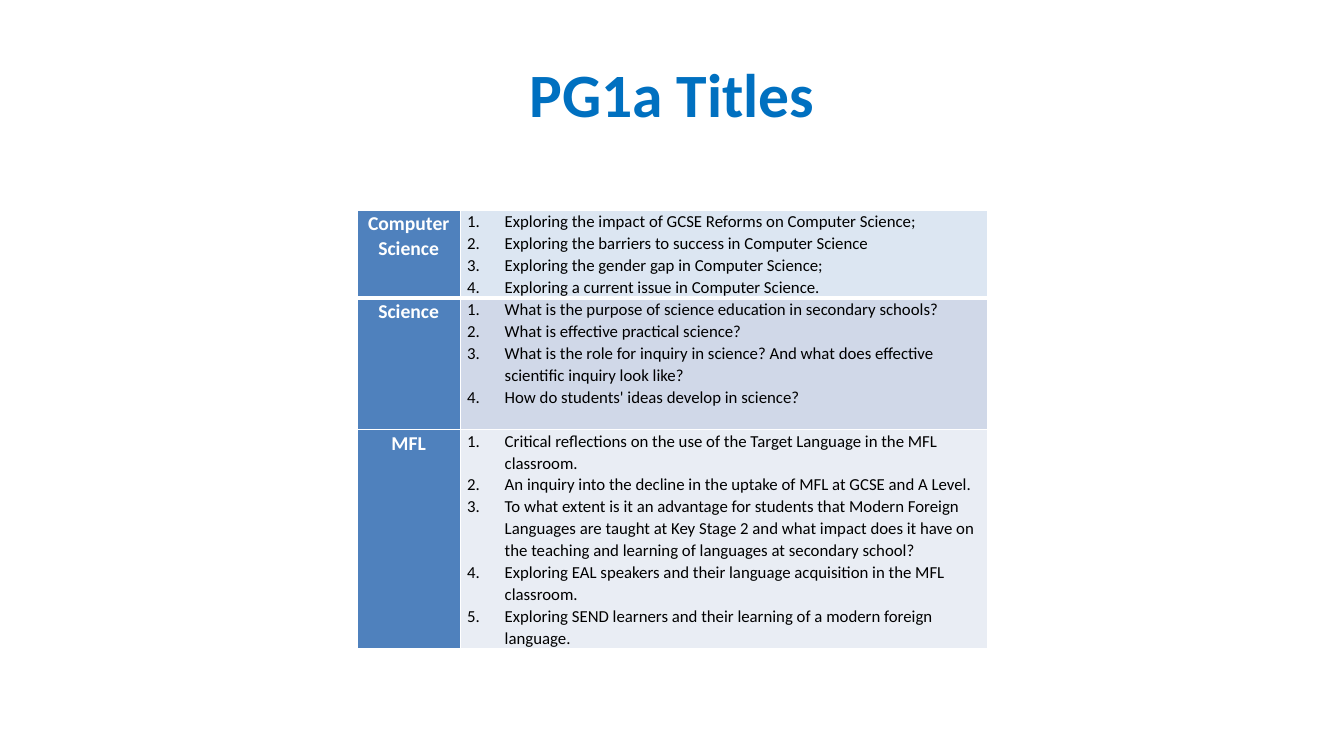
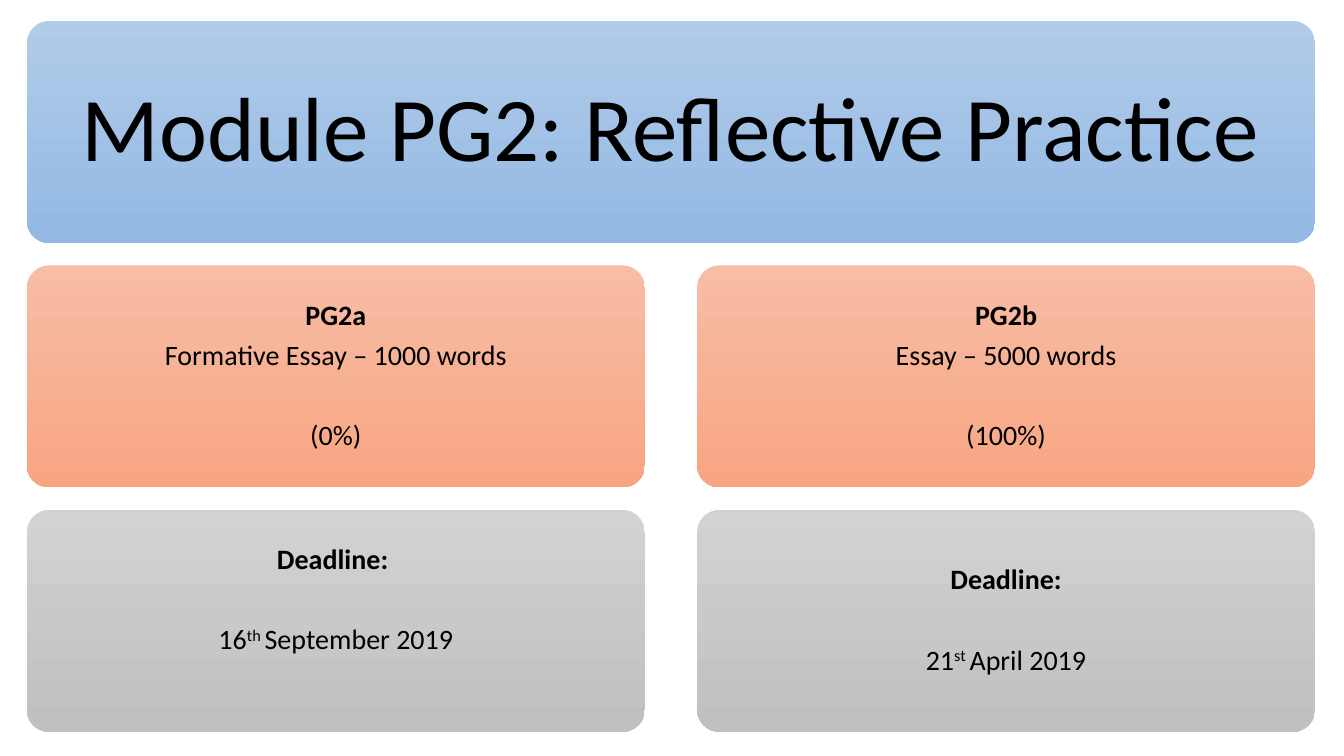
from dataclasses import dataclass

from lxml import etree
from pptx import Presentation
from pptx.dml.color import RGBColor
from pptx.enum.shapes import MSO_SHAPE
from pptx.enum.text import MSO_ANCHOR, PP_ALIGN
from pptx.oxml.ns import qn
from pptx.util import Cm, Pt

ROUNDED = MSO_SHAPE.ROUNDED_RECTANGLE
MIDDLE = MSO_ANCHOR.MIDDLE
CENTER, LEFT = PP_ALIGN.CENTER, PP_ALIGN.LEFT

FONT = "Calibri"
BLACK, WHITE = "000000", "FFFFFF"
TITLE_BLUE, SUBJECT_BLUE = "0070C0", "4F81BD"
BLUE_FADE = ("B1CBE9", "93B9E4")
ORANGE_FADE = ("F7BDA5", "F8A582")
GREY_FADE = ("D2D2D2", "C0C0C0")

# Card grid, in cm
GRID_LEFT, GRID_TOP = 0.68, 0.53
CARD_WIDTH, CARD_HEIGHT = 15.57, 5.59
COLUMN_GAP, ROW_GAP = 1.32, 0.57
LINE_STEP = 29  # points from one card line to the next
SPACE_AFTER = 7


@dataclass
class Subject:
    name: str
    height: float
    fill: str
    titles: list[str]
    top_rule: int = 1
    bottom_rule: int = 1


@dataclass
class Line:
    text: str
    bold: bool = False
    ordinal: str = ""
    rest: str = ""
    blank_before: int = 0


@dataclass
class Card:
    row: int
    column: int
    fade: tuple[str, str]
    lines: list[Line]
    span: int = 1
    size: int = 20
    inset: float = 0.2
    lift: float = 0  # extra bottom inset in points


SUBJECTS = [
    Subject("Computer Science", 2.22, "DCE6F2", [
        "Exploring the impact of GCSE Reforms on Computer Science;",
        "Exploring the barriers to success in Computer Science",
        "Exploring the gender gap in Computer Science;",
        "Exploring a current issue in Computer Science.",
    ], bottom_rule=3),
    Subject("Science", 3.32, "D0D8E8", [
        "What is the purpose of science education in secondary schools?",
        "What is effective practical science?",
        "What is the role for inquiry in science? And what does effective "
        "scientific inquiry look like?",
        "How do students' ideas develop in science?",
    ], top_rule=3),
    Subject("MFL", 5.51, "E9EDF4", [
        "Critical reflections on the use of the Target Language in the MFL classroom.",
        "An inquiry into the decline in the uptake of MFL at GCSE and A Level.",
        "To what extent is it an advantage for students that Modern Foreign "
        "Languages are taught at Key Stage 2 and what impact does it have on "
        "the teaching and learning of languages at secondary school?",
        "Exploring EAL speakers and their language acquisition in the MFL classroom.",
        "Exploring SEND learners and their learning of a modern foreign language.",
    ]),
]

CARDS = [
    Card(0, 0, BLUE_FADE, [Line("Module PG2: Reflective Practice")],
         span=2, size=65, inset=0.69),
    Card(1, 0, ORANGE_FADE, [
        Line("PG2a", bold=True),
        Line("Formative Essay – 1000 words"),
        Line("(0%)", blank_before=1),
    ]),
    Card(2, 0, GREY_FADE, [
        Line("Deadline: ", bold=True),
        Line("16", ordinal="th ", rest="September 2019", blank_before=1),
    ], lift=LINE_STEP),
    Card(1, 1, ORANGE_FADE, [
        Line("PG2b", bold=True),
        Line("Essay – 5000 words"),
        Line("(100%)", blank_before=1),
    ]),
    Card(2, 1, GREY_FADE, [
        Line("Deadline:", bold=True),
        Line("21", ordinal="st ", rest="April 2019", blank_before=1),
    ]),
]


def rgb(color: str) -> RGBColor:
    return RGBColor.from_string(color)


def apply_format(target, values: dict) -> None:
    for name, value in values.items():
        setattr(target, name, value)


def add_text(paragraph, text: str, size: int, color: str = BLACK,
             bold: bool = False, raised: bool = False) -> None:
    run = paragraph.add_run()
    run.text = text
    apply_format(run.font, {"name": FONT, "size": Pt(size), "bold": bold})
    run.font.color.rgb = rgb(color)
    if raised:
        run.font._element.set("baseline", "30000")


def next_paragraph(frame, index: int):
    return frame.add_paragraph() if index else frame.paragraphs[0]


def number_paragraph(paragraph) -> None:
    properties = paragraph._p.get_or_add_pPr()
    properties.set("marL", str(Cm(0.95)))
    properties.set("indent", str(-Cm(0.95)))
    etree.SubElement(properties, qn("a:buAutoNum"), type="arabicPeriod")


def set_borders(cell, subject: Subject) -> None:
    properties = cell._tc.get_or_add_tcPr()
    rules = {"lnL": 1, "lnR": 1, "lnT": subject.top_rule, "lnB": subject.bottom_rule}
    for side, width in rules.items():
        rule = etree.SubElement(properties, qn(f"a:{side}"), w=str(Pt(width)))
        fill = etree.SubElement(rule, qn("a:solidFill"))
        etree.SubElement(fill, qn("a:srgbClr"), val=WHITE)


def fill_cell(cell, subject: Subject, fill: str, texts: list[str], heading: bool) -> None:
    apply_format(cell, {"margin_left": Cm(0.17), "margin_right": Cm(0.17),
                        "margin_top": 0, "margin_bottom": 0})
    set_borders(cell, subject)
    cell.fill.solid()
    cell.fill.fore_color.rgb = rgb(fill)
    for index, text in enumerate(texts):
        paragraph = next_paragraph(cell.text_frame, index)
        apply_format(paragraph, {"alignment": CENTER if heading else LEFT,
                                 "line_spacing": 1.07})
        if heading:
            add_text(paragraph, text, 14, WHITE, bold=True)
        else:
            number_paragraph(paragraph)
            add_text(paragraph, text, 12)


def add_title(slide, text: str) -> None:
    frame = slide.shapes.add_textbox(Cm(1.7), Cm(0.76), Cm(30.48), Cm(3.18)).text_frame
    apply_format(frame, {"word_wrap": True, "vertical_anchor": MIDDLE})
    frame.paragraphs[0].alignment = CENTER
    add_text(frame.paragraphs[0], text, 44, TITLE_BLUE, bold=True)


def add_subject_table(slide, subjects: list[Subject]) -> None:
    widths = (2.6, 13.3)
    height = sum(subject.height for subject in subjects)
    table = slide.shapes.add_table(len(subjects), len(widths), Cm(9), Cm(5.29),
                                   Cm(sum(widths)), Cm(height)).table
    apply_format(table, {"first_row": False, "horz_banding": False})
    for column, width in zip(table.columns, widths):
        column.width = Cm(width)
    for row, subject in zip(table.rows, subjects):
        row.height = Cm(subject.height)
        name_cell, titles_cell = row.cells
        fill_cell(name_cell, subject, SUBJECT_BLUE, [subject.name], heading=True)
        fill_cell(titles_cell, subject, subject.fill, subject.titles, heading=False)


def add_card(slide, card: Card) -> None:
    left = GRID_LEFT + card.column * (CARD_WIDTH + COLUMN_GAP)
    top = GRID_TOP + card.row * (CARD_HEIGHT + ROW_GAP)
    width = card.span * CARD_WIDTH + (card.span - 1) * COLUMN_GAP
    panel = slide.shapes.add_shape(ROUNDED, Cm(left), Cm(top), Cm(width), Cm(CARD_HEIGHT))
    panel.adjustments[0] = 0.1
    panel.shadow.inherit = False
    panel.line.fill.background()
    panel.fill.gradient()
    panel.fill.gradient_angle = 270
    for stop, color in zip(panel.fill.gradient_stops, card.fade):
        stop.color.rgb = rgb(color)

    # Card text
    frame = panel.text_frame
    inset = Cm(card.inset)
    apply_format(frame, {"word_wrap": True, "vertical_anchor": MIDDLE,
                         "margin_left": inset, "margin_right": inset,
                         "margin_top": inset, "margin_bottom": inset + Pt(card.lift)})
    for index, line in enumerate(card.lines):
        paragraph = next_paragraph(frame, index)
        apply_format(paragraph, {"alignment": CENTER, "line_spacing": 0.9,
                                 "space_after": Pt(SPACE_AFTER)})
        if line.blank_before:
            paragraph.space_before = Pt(line.blank_before * LINE_STEP)
        add_text(paragraph, line.text, card.size, bold=line.bold)
        if line.ordinal:
            add_text(paragraph, line.ordinal, card.size, raised=True)
            add_text(paragraph, line.rest, card.size)


def main() -> None:
    deck = Presentation()
    apply_format(deck, {"slide_width": Cm(33.87), "slide_height": Cm(19.05)})
    blank = deck.slide_layouts[6]

    # Essay titles by subject
    titles_slide = deck.slides.add_slide(blank)
    add_title(titles_slide, "PG1a Titles")
    add_subject_table(titles_slide, SUBJECTS)

    # Module overview
    module_slide = deck.slides.add_slide(blank)
    for card in CARDS:
        add_card(module_slide, card)

    deck.save("out.pptx")


if __name__ == "__main__":
    main()
